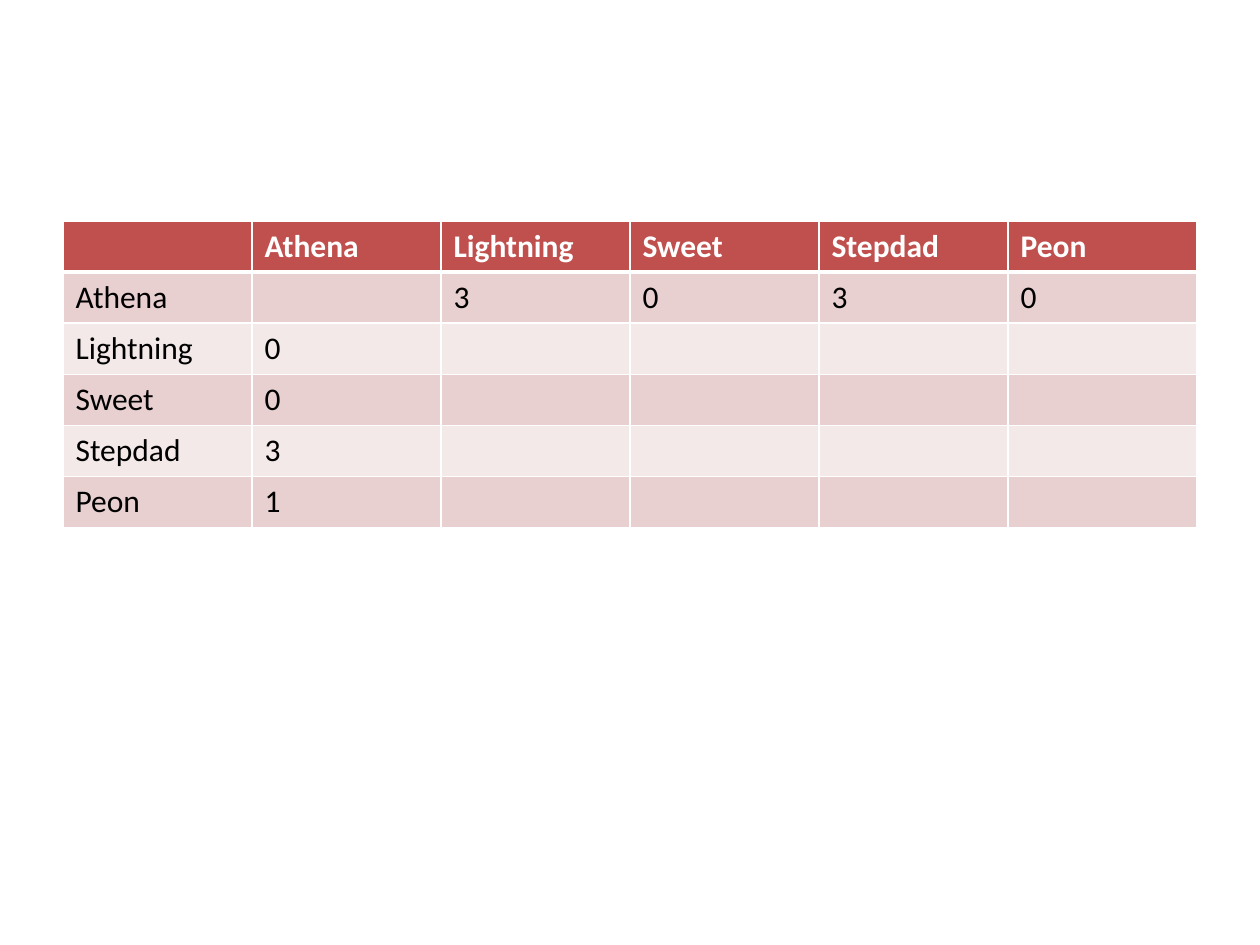
from dataclasses import dataclass

from lxml.etree import SubElement
from pptx import Presentation
from pptx.dml.color import RGBColor
from pptx.oxml.ns import qn
from pptx.util import Emu, Pt

PX_PER_INCH = 126
BLANK_LAYOUT = 6


@dataclass(frozen=True)
class Theme:
    font: str = "Calibri"
    text_size: int = 18
    header_fill: str = "C0504D"
    band_fills: tuple = ("E8D0D0", "F4E9E9")
    header_text: str = "FFFFFF"
    body_text: str = "000000"
    border: str = "FFFFFF"
    thin: int = 1
    thick: int = 3


THEME = Theme()
NAMES = ["Athena", "Lightning", "Sweet", "Stepdad", "Peon"]
SCORES = [
    ["", "3", "0", "3", "0"],
    ["0", "", "", "", ""],
    ["0", "", "", "", ""],
    ["3", "", "", "", ""],
    ["1", "", "", "", ""],
]
TABLE_LEFT, TABLE_TOP = 63, 221
COLUMN_WIDTH, ROW_HEIGHT = 189, 51


def px(length):
    return Emu(round(length * 914400 / PX_PER_INCH))


def set_borders(cell, widths):
    """Draw the cell's sides; widths maps L, R, T, B (in that order) to points."""
    properties = cell._tc.get_or_add_tcPr()
    for side, width in widths.items():
        line = SubElement(properties, qn(f"a:ln{side}"), w=str(Pt(width)))
        fill = SubElement(line, qn("a:solidFill"))
        SubElement(fill, qn("a:srgbClr"), val=THEME.border)


def format_cell(cell, text, row):
    is_header = row == 0
    set_borders(cell, {
        "L": THEME.thin,
        "R": THEME.thin,
        "T": THEME.thick if row == 1 else THEME.thin,
        "B": THEME.thick if is_header else THEME.thin,
    })
    fill = THEME.header_fill if is_header else THEME.band_fills[(row - 1) % 2]
    cell.fill.solid()
    cell.fill.fore_color.rgb = RGBColor.from_string(fill)

    cell.text = text
    font = cell.text_frame.paragraphs[0].font
    font_format = {"name": THEME.font, "size": Pt(THEME.text_size), "bold": is_header}
    for name, value in font_format.items():
        setattr(font, name, value)
    color = THEME.header_text if is_header else THEME.body_text
    font.color.rgb = RGBColor.from_string(color)


def add_score_table(slide):
    rows = [["", *NAMES]] + [[name, *scores] for name, scores in zip(NAMES, SCORES)]
    row_count, column_count = len(rows), len(rows[0])
    table = slide.shapes.add_table(
        row_count, column_count, px(TABLE_LEFT), px(TABLE_TOP),
        px(COLUMN_WIDTH * column_count), px(ROW_HEIGHT * row_count),
    ).table
    for column in table.columns:
        column.width = px(COLUMN_WIDTH)
    for row, texts in enumerate(rows):
        table.rows[row].height = px(ROW_HEIGHT)
        for column, text in enumerate(texts):
            format_cell(table.cell(row, column), text, row)


def main():
    presentation = Presentation()
    presentation.slide_width = px(1260)
    presentation.slide_height = px(945)
    slide = presentation.slides.add_slide(presentation.slide_layouts[BLANK_LAYOUT])
    add_score_table(slide)
    presentation.save("out.pptx")


if __name__ == "__main__":
    main()
